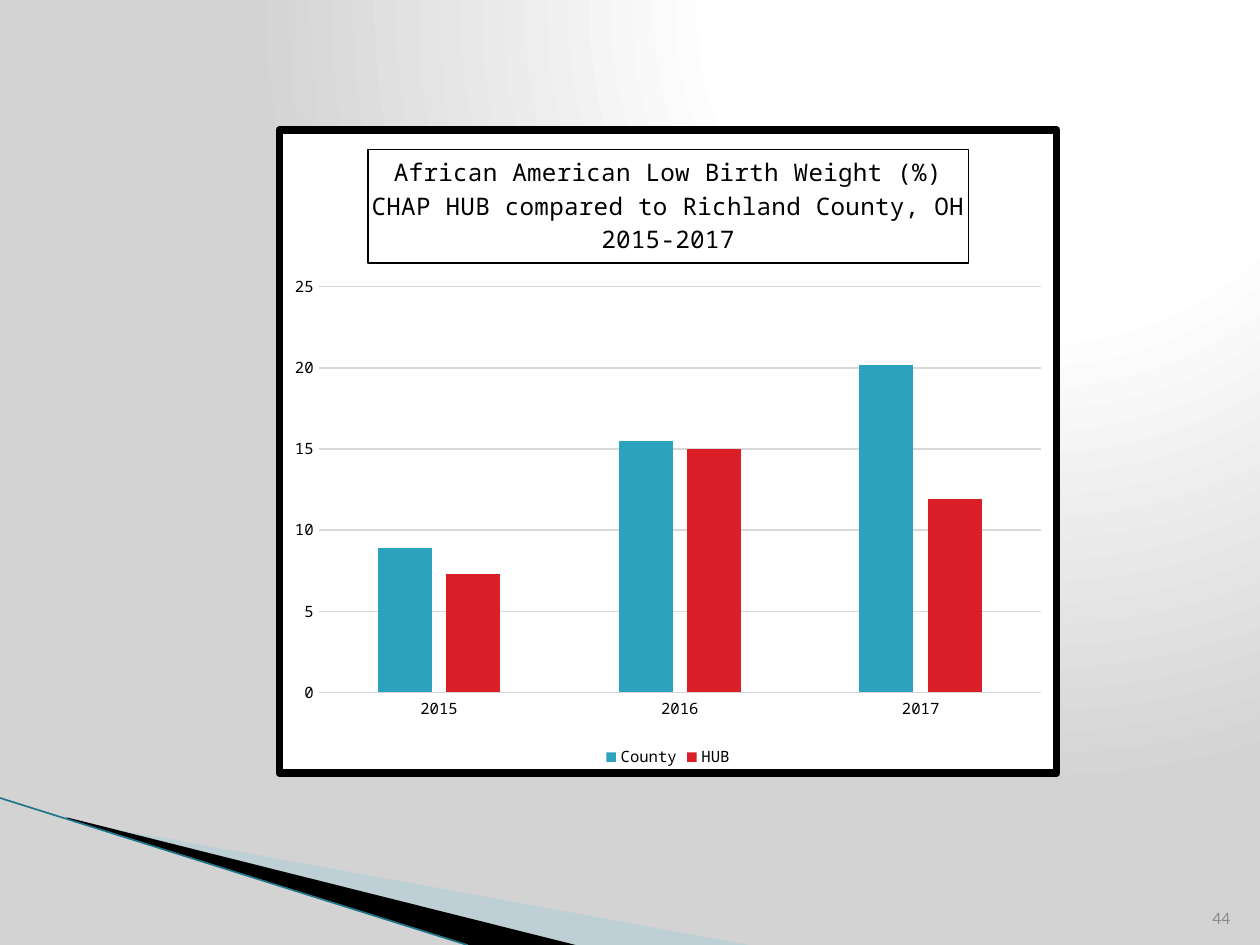
from dataclasses import dataclass

from lxml.etree import SubElement
from pptx import Presentation
from pptx.chart.data import CategoryChartData
from pptx.dml.color import RGBColor
from pptx.enum.chart import XL_CHART_TYPE, XL_LEGEND_POSITION, XL_TICK_MARK
from pptx.enum.shapes import MSO_CONNECTOR
from pptx.enum.text import MSO_ANCHOR, PP_ALIGN
from pptx.oxml import parse_xml
from pptx.oxml.ns import nsdecls, qn
from pptx.util import Pt


@dataclass(frozen=True)
class Theme:
    """Colours, fonts and type sizes of the slide."""
    white: str = "FFFFFF"
    black: str = "000000"
    shade: str = "D3D3D3"
    grid: str = "D9D9D9"
    muted: str = "8C8C8C"
    pale: str = "A0CBDC"
    edge: str = "1E768C"
    teal: str = "2DA2BF"
    red: str = "DA1F28"
    mono: str = "Noto Sans Mono"
    sans: str = "Calibri"
    head: int = 14
    note: int = 10
    label: int = 9


THEME = Theme()
TITLE = (
    "African American Low Birth Weight (%)",
    "CHAP HUB compared to Richland County, OH",
    "2015-2017",
)
YEARS = ("2015", "2016", "2017")
SERIES = (
    ("County", (8.9, 15.5, 20.2), THEME.teal),
    ("HUB", (7.3, 15, 11.9), THEME.red),
)


def rgb(code):
    """Turn a hex code into a colour."""
    return RGBColor.from_string(code)


def style(font, size, color=THEME.black, face=THEME.mono):
    """Set the size, colour and face of a font."""
    font.size = Pt(size)
    font.bold = False
    font.name = face
    font.color.rgb = rgb(color)


def stroke(line, color, width=0.75):
    """Draw a line in one colour and width."""
    line.color.rgb = rgb(color)
    line.width = Pt(width)


def backdrop(slide):
    """Fill the background with a round white-to-grey gradient."""
    slide.background.fill.gradient()
    grad = slide.background._cSld.find(".//" + qn("a:gradFill"))
    stops = "".join(
        f'<a:gs pos="{pos}000"><a:srgbClr val="{color}"/></a:gs>'
        for pos, color in ((0, THEME.white), (40, THEME.white), (100, THEME.shade))
    )
    fresh = parse_xml(
        f'<a:gradFill {nsdecls("a")} rotWithShape="1"><a:gsLst>{stops}</a:gsLst>'
        '<a:path path="circle"><a:fillToRect l="65000" t="0" r="0" b="98000"/>'
        "</a:path></a:gradFill>"
    )
    grad.getparent().replace(grad, fresh)


def wedge(slide, box, points, color, alpha=None):
    """Draw a filled outline from points relative to the box."""
    left, top = box[:2]
    spots = [(Pt(left + x), Pt(top + y)) for x, y in points]
    pen = slide.shapes.build_freeform(*spots[0])
    pen.add_line_segments(spots[1:], close=True)
    shape = pen.convert_to_shape()
    shape.shadow.inherit = False
    shape.fill.solid()
    shape.fill.fore_color.rgb = rgb(color)
    shape.line.fill.background()
    if alpha:
        tint = shape._element.spPr.find(".//" + qn("a:srgbClr"))
        SubElement(tint, qn("a:alpha")).set("val", str(alpha * 1000))


def corner(slide, box):
    """Draw the two wedges and the thin line at the lower left."""
    left, top, _, high = box
    wedge(slide, box, ((40, 13), (428, high), (328, high), (40, 12)), THEME.pale, 40)
    wedge(slide, box, ((38, 11), (329, high), (268, high), (39, 12)), THEME.black)
    line = slide.shapes.add_connector(
        MSO_CONNECTOR.STRAIGHT, Pt(left), Pt(top), Pt(left + 267), Pt(top + high)
    )
    stroke(line.line, THEME.edge, 0.95)
    SubElement(line._element.spPr, qn("a:effectLst"))


def number(slide, box, text):
    """Place the page number."""
    frame = slide.shapes.add_textbox(*map(Pt, box)).text_frame
    frame.word_wrap = True
    frame.vertical_anchor = MSO_ANCHOR.BOTTOM
    para = frame.paragraphs[0]
    para.text = text
    para.alignment = PP_ALIGN.RIGHT
    style(para.font, THEME.note, THEME.muted, THEME.sans)


def heading(chart):
    """Write the framed chart title."""
    title = chart.chart_title
    title.include_in_layout = False
    frame = title.text_frame
    for i, text in enumerate(TITLE):
        para = frame.add_paragraph() if i else frame.paragraphs[0]
        para.text = text
        style(para.font, THEME.head)
    stroke(title.format.line, THEME.black)


def axes(chart):
    """Format both axes and the grid."""
    for axis in (chart.category_axis, chart.value_axis):
        axis.major_tick_mark = axis.minor_tick_mark = XL_TICK_MARK.NONE
        style(axis.tick_labels.font, THEME.label)
    stroke(chart.category_axis.format.line, THEME.grid)
    scale = chart.value_axis
    scale.minimum_scale, scale.maximum_scale, scale.major_unit = 0, 25, 5
    scale.format.line.fill.background()
    scale.has_major_gridlines = True
    stroke(scale.major_gridlines.format.line, THEME.grid)


def border(chart):
    """Give the chart area a white fill and a thick black frame."""
    area = parse_xml(
        f'<c:spPr {nsdecls("c", "a")}><a:solidFill><a:srgbClr val="{THEME.white}"/>'
        f'</a:solidFill><a:ln w="{Pt(4.33)}"><a:solidFill>'
        f'<a:srgbClr val="{THEME.black}"/></a:solidFill><a:round/></a:ln></c:spPr>'
    )
    chart._chartSpace.find(qn("c:chart")).addnext(area)


def bars(slide, box):
    """Place the clustered column chart."""
    data = CategoryChartData()
    data.categories = YEARS
    for name, vals, _ in SERIES:
        data.add_series(name, vals)
    kind = XL_CHART_TYPE.COLUMN_CLUSTERED
    chart = slide.shapes.add_chart(kind, *map(Pt, box), data).chart
    style(chart.font, THEME.note)
    heading(chart)
    axes(chart)
    chart.has_legend = True
    chart.legend.position = XL_LEGEND_POSITION.BOTTOM
    chart.legend.include_in_layout = False
    style(chart.legend.font, THEME.label)
    plot = chart.plots[0]
    plot.gap_width, plot.overlap, plot.vary_by_categories = 219, -27, False
    for item, (_, _, color) in zip(plot.series, SERIES):
        item.format.fill.solid()
        item.format.fill.fore_color.rgb = rgb(color)
    border(chart)


def main():
    """Build and save the slide."""
    deck = Presentation()
    deck.slide_width, deck.slide_height = Pt(720), Pt(540)
    slide = deck.slides.add_slide(deck.slide_layouts[6])
    backdrop(slide)
    corner(slide, (0, 456, 428, 84))
    number(slide, (681, 505, 29, 29), "44")
    bars(slide, (157.5, 72, 448.5, 372))
    deck.save("out.pptx")


if __name__ == "__main__":
    main()
